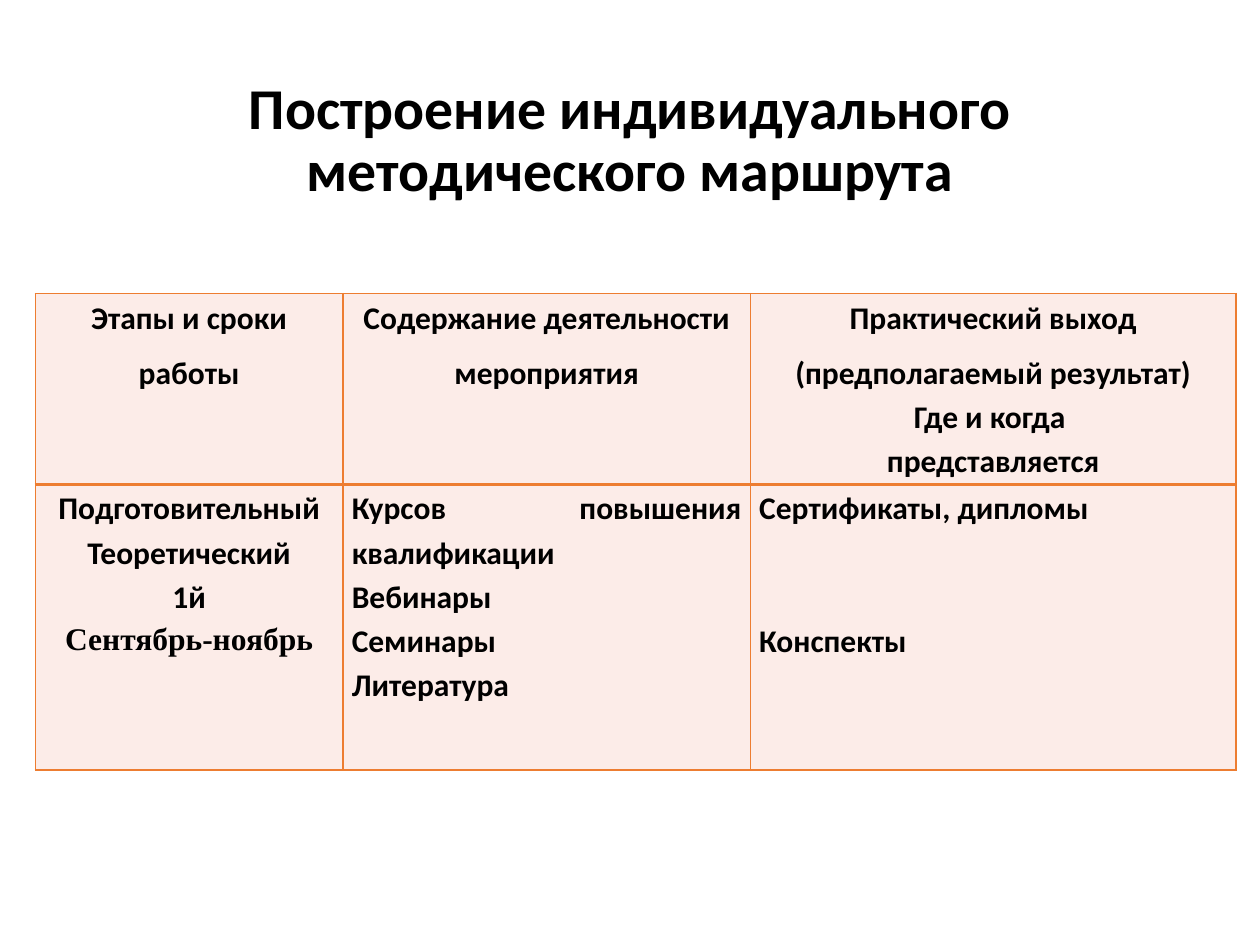
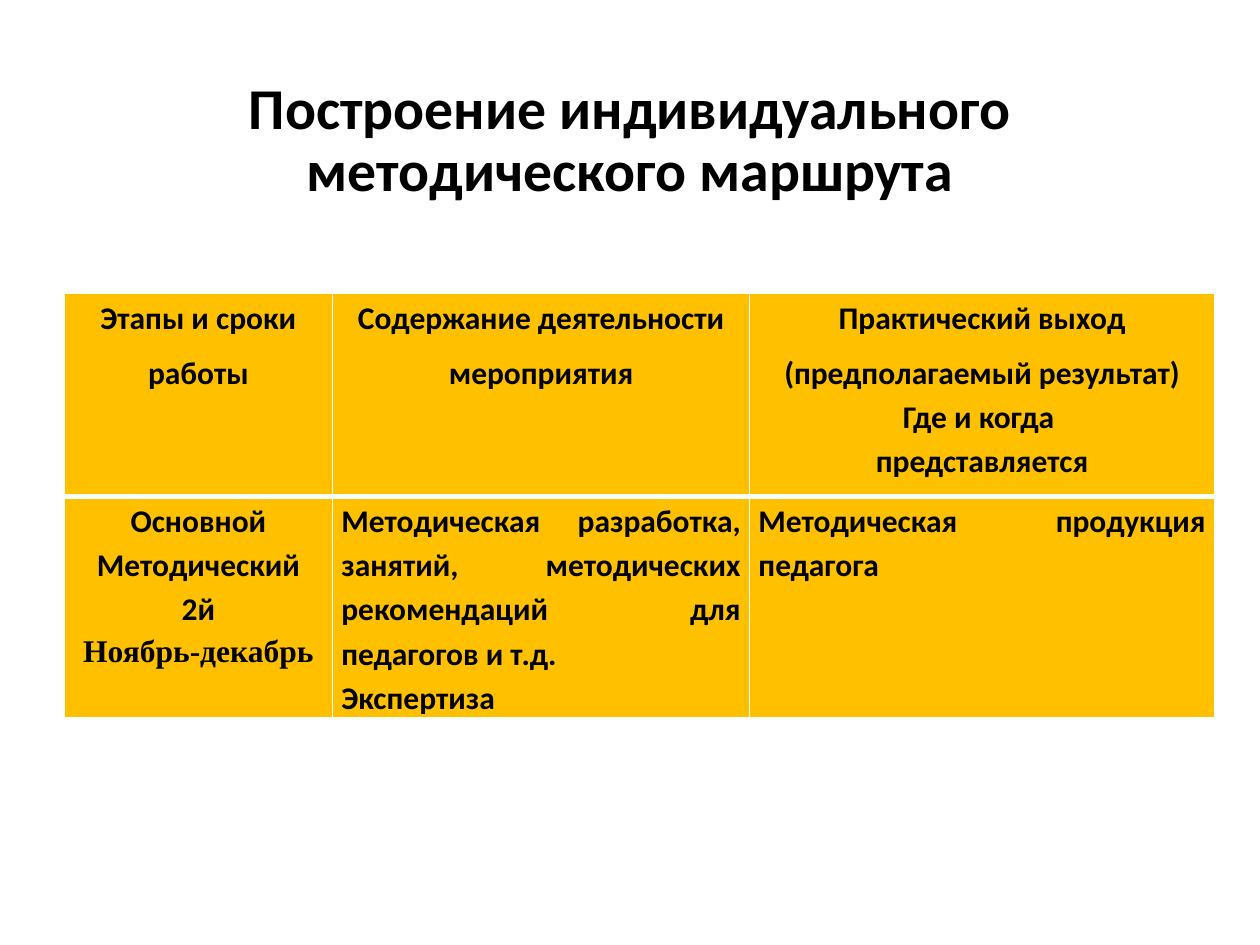
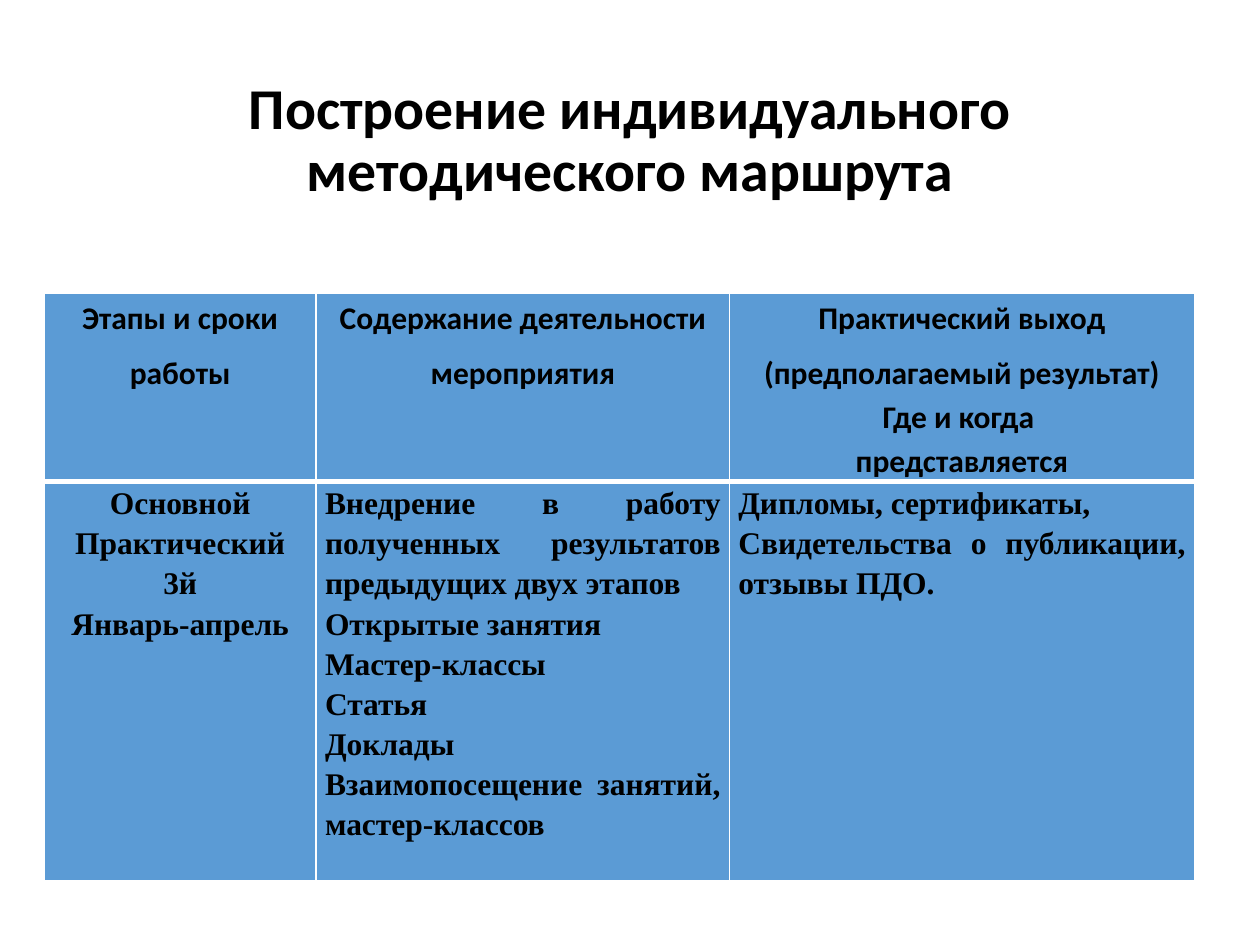
import dataclasses

import lxml.etree
import pptx
import pptx.dml.color
import pptx.enum.text
import pptx.oxml.ns
import pptx.util

ALIGN = pptx.enum.text.PP_ALIGN
SLIDE_WIDTH = pptx.util.Inches(10)
SLIDE_HEIGHT = pptx.util.Inches(7.5)


@dataclasses.dataclass(frozen=True)
class Theme:
    font: str = "Calibri"
    serif: str = "Times New Roman"
    ink: str = "000000"
    title_size: float = 33
    cell_size: float = 18
    cell_leading: float = 1.15
    cell_inset: float = 0.07
    header_gap: float = 6
    skipped_rows: float = 50.5  # two line heights, in points


THEME = Theme()


@dataclasses.dataclass(frozen=True)
class Line:
    text: str
    font: str = THEME.font
    gap: float = 0


@dataclasses.dataclass(frozen=True)
class Box:
    """Area in percent of the slide's width and height."""
    left: float
    top: float
    width: float
    height: float

    def emu(self):
        return (across(self.left), down(self.top),
                across(self.width), down(self.height))


@dataclasses.dataclass(frozen=True)
class Stage:
    """One stage of the route: its table's look, grid and content cells."""
    fill: str
    border: str
    rule: float
    box: Box
    columns: tuple
    header_share: float
    cells: tuple


def across(percent):
    return round(SLIDE_WIDTH * percent / 100)


def down(percent):
    return round(SLIDE_HEIGHT * percent / 100)


def serif_lines(*texts):
    return [Line(text, THEME.serif) for text in texts]


TITLE = "Построение индивидуального методического маршрута"
TITLE_BOX = Box(6.9, 5.33, 86.2, 19.33)
TABLE_TOP = 31.07
HEADER = (
    [Line("Этапы и сроки"), Line("работы", gap=THEME.header_gap)],
    [Line("Содержание деятельности"), Line("мероприятия", gap=THEME.header_gap)],
    [Line("Практический выход"),
     Line("(предполагаемый результат)", gap=THEME.header_gap),
     Line("Где и когда "), Line("представляется")],
)
STAGES = (
    Stage("FCECE8", "ED7D31", 2, Box(2.8, TABLE_TOP, 95.3, 50.4),
          (2.44, 3.23, 3.85), 0.4, (
        [Line("Подготовительный"), Line("Теоретический"), Line("1й"),
         Line("Сентябрь-ноябрь", THEME.serif)],
        [Line("Курсов повышения квалификации"), Line("Вебинары"),
         Line("Семинары"), Line("Литература")],
        [Line("Сертификаты, дипломы"),
         Line("Конспекты", gap=THEME.skipped_rows)],
    )),
    Stage("FFC000", "FFFFFF", 3, Box(5.1, TABLE_TOP, 91.3, 44.8),
          (2.13, 3.31, 3.69), 0.48, (
        [Line("Основной"), Line("Методический"), Line("2й"),
         Line("Ноябрь-декабрь", THEME.serif)],
        [Line("Методическая разработка, занятий, методических "
              "рекомендаций для педагогов и т.д."), Line("Экспертиза")],
        [Line("Методическая продукция педагога")],
    )),
    Stage("5B9BD5", "FFFFFF", 3, Box(3.5, TABLE_TOP, 91.3, 62.13),
          (2.16, 3.28, 3.69), 0.32, (
        serif_lines("Основной", "Практический", "3й", "Январь-апрель"),
        serif_lines("Внедрение в работу полученных результатов "
                    "предыдущих двух этапов", "Открытые занятия",
                    "Мастер-классы", "Статья", "Доклады",
                    "Взаимопосещение занятий, мастер-классов"),
        serif_lines("Дипломы, сертификаты, ",
                    "Свидетельства о публикации, отзывы ПДО."),
    )),
)


def style_paragraph(paragraph, font, size, align, leading):
    paragraph.alignment = align
    paragraph.line_spacing = leading
    paragraph.font.name = font
    paragraph.font.size = pptx.util.Pt(size)
    paragraph.font.bold = True
    paragraph.font.color.rgb = pptx.dml.color.RGBColor.from_string(THEME.ink)


def place_title(slide, box):
    title = slide.shapes.title
    title.left, title.top, title.width, title.height = box.emu()
    frame = title.text_frame
    frame.text = TITLE
    frame.vertical_anchor = pptx.enum.text.MSO_ANCHOR.MIDDLE
    style_paragraph(frame.paragraphs[0], THEME.font, THEME.title_size,
                    ALIGN.CENTER, 0.9)


def border_cell(cell, color, widths):
    """Draw the cell's edges; widths maps L, R, T, B to points, in that order."""
    qn = pptx.oxml.ns.qn
    properties = cell._tc.get_or_add_tcPr()
    for side, width in widths.items():
        edge = lxml.etree.SubElement(properties, qn(f"a:ln{side}"),
                                     w=str(pptx.util.Pt(width)))
        fill = lxml.etree.SubElement(edge, qn("a:solidFill"))
        lxml.etree.SubElement(fill, qn("a:srgbClr"), val=color)


def fill_cell(cell, lines, align, color):
    cell.margin_left = cell.margin_right = pptx.util.Inches(THEME.cell_inset)
    cell.margin_top = cell.margin_bottom = 0
    cell.fill.solid()
    cell.fill.fore_color.rgb = pptx.dml.color.RGBColor.from_string(color)
    cell.text = "\n".join(line.text for line in lines)
    for paragraph, line in zip(cell.text_frame.paragraphs, lines):
        style_paragraph(paragraph, line.font, THEME.cell_size, align,
                        THEME.cell_leading)
        if line.gap:
            paragraph.space_before = pptx.util.Pt(line.gap)


def place_stage_table(slide, stage):
    left, top, width, height = stage.box.emu()
    table = slide.shapes.add_table(2, len(HEADER), left, top, width, height).table
    table.horz_banding = False
    for column, weight in zip(table.columns, stage.columns):
        column.width = round(width * weight / sum(stage.columns))
    table.rows[0].height = round(height * stage.header_share)
    table.rows[1].height = height - table.rows[0].height

    edges = ({"L": 1, "R": 1, "T": 1, "B": stage.rule},
             {"L": 1, "R": 1, "T": stage.rule, "B": 1})
    for row, contents in enumerate((HEADER, stage.cells)):
        for column, lines in enumerate(contents):
            cell = table.cell(row, column)
            centred = row == 0 or column == 0
            border_cell(cell, stage.border, edges[row])
            fill_cell(cell, lines, ALIGN.CENTER if centred else ALIGN.JUSTIFY,
                      stage.fill)


def main():
    deck = pptx.Presentation()
    deck.slide_width, deck.slide_height = SLIDE_WIDTH, SLIDE_HEIGHT
    title_only = deck.slide_layouts.get_by_name("Title Only")
    for stage in STAGES:
        slide = deck.slides.add_slide(title_only)
        place_title(slide, TITLE_BOX)
        place_stage_table(slide, stage)
    deck.save("out.pptx")


if __name__ == "__main__":
    main()
